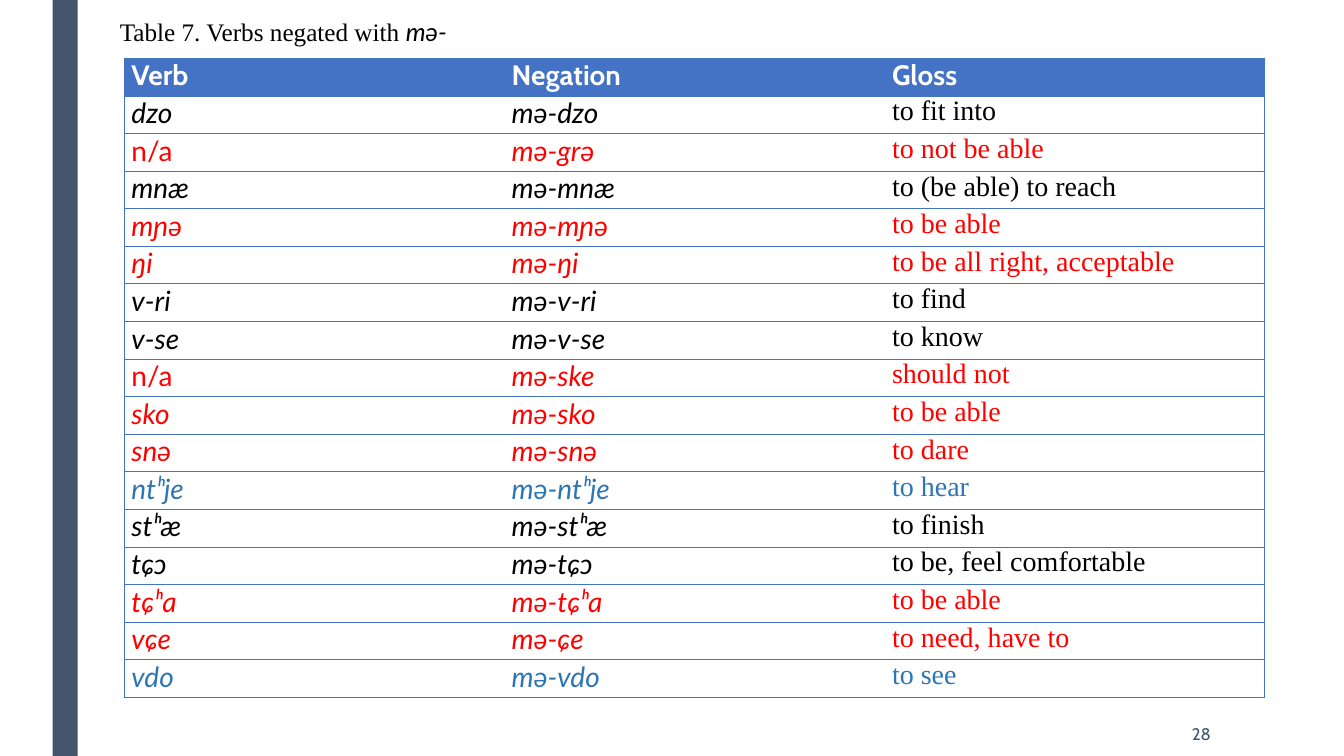
from lxml import etree
from pptx import Presentation
from pptx.dml.color import RGBColor
from pptx.enum.shapes import MSO_SHAPE
from pptx.enum.text import MSO_ANCHOR, MSO_AUTO_SIZE, PP_ALIGN
from pptx.oxml.ns import qn
from pptx.util import Pt

RECTANGLE = MSO_SHAPE.RECTANGLE
MIDDLE = MSO_ANCHOR.MIDDLE
FIT_SHAPE = MSO_AUTO_SIZE.SHAPE_TO_FIT_TEXT
JUSTIFY, LEFT, RIGHT = PP_ALIGN.JUSTIFY, PP_ALIGN.LEFT, PP_ALIGN.RIGHT

SLATE = RGBColor(0x44, 0x54, 0x6A)
HEADER_BLUE = RGBColor(0x44, 0x72, 0xC4)
WHITE = RGBColor(0xFF, 0xFF, 0xFF)
BLACK = RGBColor(0x00, 0x00, 0x00)
RED = RGBColor(0xFF, 0x00, 0x00)
BLUE = RGBColor(0x2E, 0x75, 0xB6)

HEADING_FONT, VERB_FONT, TEXT_FONT = "Cabin", "Lato", "Times New Roman"

HEADINGS = ("Verb", "Negation", "Gloss")
VERBS = [
    ("dzo", "mə-dzo", "to fit into", BLACK),
    ("n/a", "mə-grə", "to not be able", RED),
    ("mnæ", "mə-mnæ", "to (be able) to reach", BLACK),
    ("mɲə", "mə-mɲə", "to be able", RED),
    ("ŋi", "mə-ŋi", "to be all right, acceptable", RED),
    ("v-ri", "mə-v-ri", "to find", BLACK),
    ("v-se", "mə-v-se", "to know", BLACK),
    ("n/a", "mə-ske", "should not", RED),
    ("sko", "mə-sko", "to be able", RED),
    ("snə", "mə-snə", "to dare", RED),
    ("ntʰje", "mə-ntʰje", "to hear", BLUE),
    ("stʰæ", "mə-stʰæ", "to finish", BLACK),
    ("tɕɔ", "mə-tɕɔ", "to be, feel comfortable", BLACK),
    ("tɕʰa", "mə-tɕʰa", "to be able", RED),
    ("vɕe", "mə-ɕe", "to need, have to", RED),
    ("vdo", "mə-vdo", "to see", BLUE),
]


def add_span(para, text, font, size, color, bold=False, italic=False):
    span = para.add_run()
    span.text = text
    span.font.name = font
    span.font.size = Pt(size)
    span.font.color.rgb = color
    span.font.bold = bold
    span.font.italic = italic


def set_borders(cell, sides):
    """Draw thin blue lines on the given sides and none on the others."""
    properties = cell._tc.get_or_add_tcPr()
    for side in "LRTB":
        line = etree.SubElement(properties, qn(f"a:ln{side}"), w=str(Pt(0.5)))
        if side in sides:
            fill = etree.SubElement(line, qn("a:solidFill"))
            etree.SubElement(fill, qn("a:srgbClr"), val=str(HEADER_BLUE))
        else:
            etree.SubElement(line, qn("a:noFill"))


def add_side_bar(page, left, top, width, height):
    bar = page.shapes.add_shape(RECTANGLE, Pt(left), Pt(top), Pt(width), Pt(height))
    bar.shadow.inherit = False
    bar.fill.solid()
    bar.fill.fore_color.rgb = SLATE
    bar.line.fill.background()


def add_text_box(page, left, top, width, height, align):
    box = page.shapes.add_textbox(Pt(left), Pt(top), Pt(width), Pt(height))
    para = box.text_frame.paragraphs[0]
    para.alignment = align
    return box.text_frame, para


def add_caption(page, left, top, width, height):
    frame, para = add_text_box(page, left, top, width, height, LEFT)
    frame.word_wrap = False
    frame.auto_size = FIT_SHAPE
    add_span(para, "Table 7. Verbs negated with ", TEXT_FONT, 18, BLACK)
    add_span(para, "mə-", VERB_FONT, 18, BLACK, italic=True)


def add_page_number(page, left, top, width, height):
    frame, para = add_text_box(page, left, top, width, height, RIGHT)
    frame.word_wrap = True
    frame.vertical_anchor = MIDDLE
    add_span(para, "28", HEADING_FONT, 12, SLATE)


def fill_cell(cell, column):
    """Set margins, borders and alignment, and return the paragraph."""
    cell.margin_left = cell.margin_right = Pt(5.4)
    cell.margin_top = cell.margin_bottom = 0
    set_borders(cell, ("LTB", "TB", "RTB")[column])
    para = cell.text_frame.paragraphs[0]
    para.alignment = JUSTIFY
    return para


def add_verb_table(page, left, top, width, height):
    row_count = len(VERBS) + 1
    table = page.shapes.add_table(
        row_count, len(HEADINGS), Pt(left), Pt(top), Pt(width), Pt(height)
    ).table
    table.first_row = table.horz_banding = False
    for row in table.rows:
        row.height = Pt(height / row_count)

    # Heading row
    for column, heading in enumerate(HEADINGS):
        cell = table.cell(0, column)
        para = fill_cell(cell, column)
        cell.fill.solid()
        cell.fill.fore_color.rgb = HEADER_BLUE
        add_span(para, heading, HEADING_FONT, 20, WHITE, bold=True)

    # Verb rows: forms in italics, glosses upright
    for row, (*texts, color) in enumerate(VERBS, start=1):
        for column, text in enumerate(texts):
            cell = table.cell(row, column)
            para = fill_cell(cell, column)
            cell.fill.background()
            is_gloss = column == 2
            font = TEXT_FONT if is_gloss else VERB_FONT
            italic = not is_gloss and text != "n/a"
            add_span(para, text, font, 20, color, italic=italic)


def main():
    deck = Presentation()
    deck.slide_width, deck.slide_height = Pt(960), Pt(540)
    page = deck.slides.add_slide(deck.slide_layouts[6])
    add_side_bar(page, 37.5, 0, 18, 540)
    add_verb_table(page, 88.5, 41.6, 815, 456.6)
    add_page_number(page, 746, 508.5, 126, 31.5)
    add_caption(page, 78.5, 8, 248.5, 29)
    deck.save("out.pptx")


if __name__ == "__main__":
    main()
